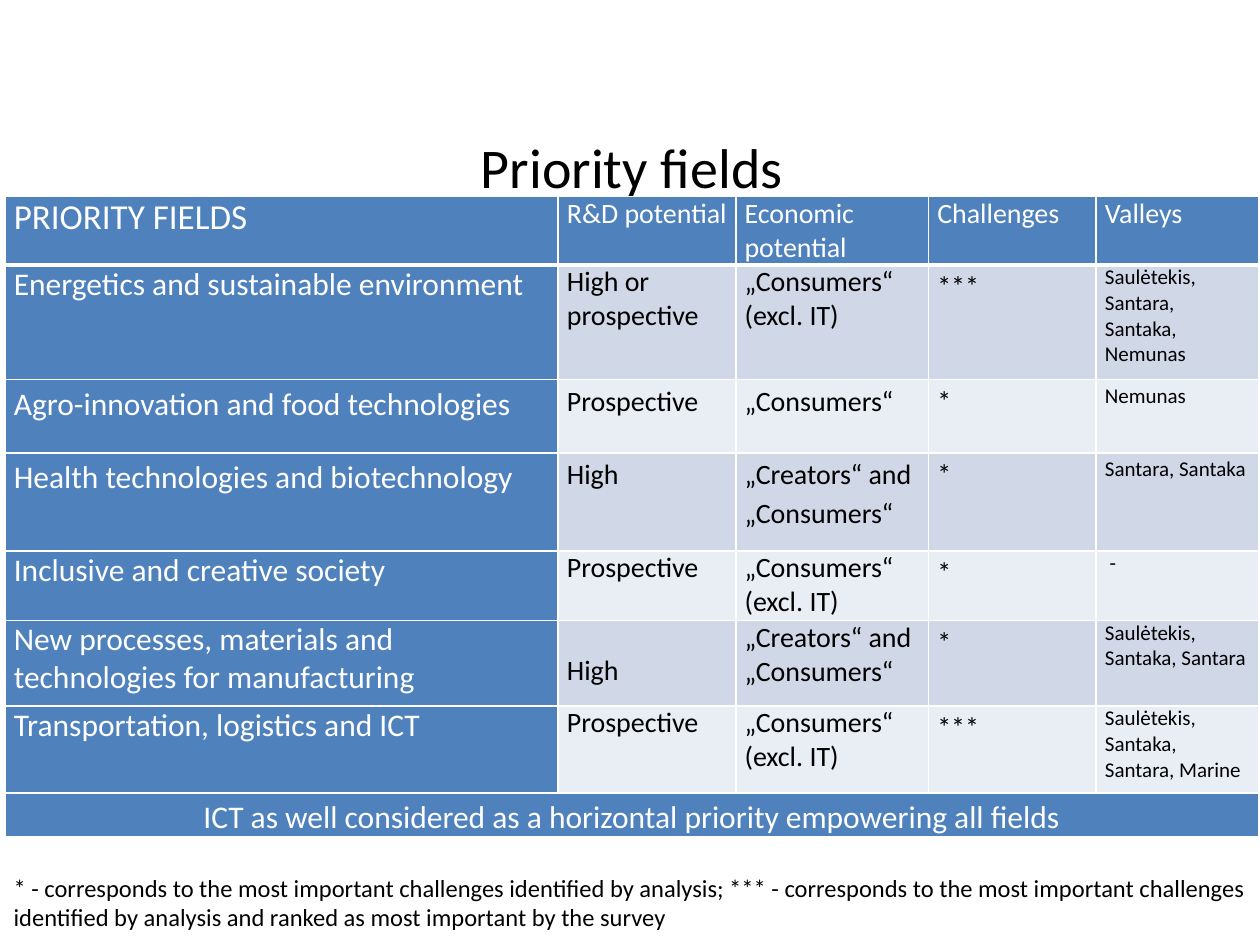
from lxml import etree
from pptx import Presentation
from pptx.dml.color import RGBColor
from pptx.enum.text import MSO_ANCHOR, PP_ALIGN
from pptx.oxml.ns import qn
from pptx.util import Inches, Pt

CENTER = PP_ALIGN.CENTER
MIDDLE = MSO_ANCHOR.MIDDLE
FONT = "Calibri"
WHITE, BLACK, BLUE = "FFFFFF", "000000", "4F81BD"
BANDS = ("D0D8E8", "E9EDF4")
LOOSE = 1.15

WIDTHS = (4.39, 1.41, 1.53, 1.33, 1.29)
HEIGHTS = (0.54, 0.91, 0.58, 0.78, 0.55, 0.68, 0.69, 0.35)
SIZES = (18, 16, 16, 16, 12)
STARS = 3  # column of challenge marks, always loosely spaced

HEAD = ("PRIORITY FIELDS", "R&D potential", "Economic potential",
        "Challenges", "Valleys")
USERS = "„Consumers“"
NO_IT = "„Consumers“\n(excl. IT)"
MIXED = "„Creators“ and „Consumers“"
# Line spacing of the row, then its cells
FIELDS = (
    (None, "Energetics and sustainable environment", "High or prospective",
     NO_IT, "***", "Saulėtekis, Santara, Santaka, Nemunas"),
    (LOOSE, "Agro-innovation and food technologies", "Prospective",
     USERS, "*", "Nemunas"),
    (LOOSE, "Health technologies and biotechnology", "High",
     MIXED, "*", "Santara, Santaka"),
    (None, "Inclusive and creative society", "Prospective",
     NO_IT, "*", "\u00a0-"),
    (None, "New processes, materials and technologies for manufacturing",
     "High", MIXED, "*", "Saulėtekis, Santaka, Santara"),
    (None, "Transportation, logistics and ICT", "Prospective",
     NO_IT, "***", "Saulėtekis, Santaka, Santara, Marine"),
)
LAST = "ICT as well considered as a horizontal priority empowering all fields"
NOTE = ("* - corresponds to the most important challenges identified by "
        "analysis; *** - corresponds to the most important challenges "
        "identified by analysis and ranked as most important by the survey")


def paint(color):
    return RGBColor.from_string(color)


def write(frame, text, size, color=BLACK, align=None, gap=None):
    frame.text = text
    for para in frame.paragraphs:
        para.alignment = align
        para.line_spacing = gap
        font = para.font
        font.name, font.size = FONT, Pt(size)
        font.color.rgb = paint(color)


def edge(cell, base=1):
    """Draw white cell borders, the lower one base points wide."""
    props = cell._tc.get_or_add_tcPr()
    sides = (("a:lnL", 1), ("a:lnR", 1), ("a:lnT", 1), ("a:lnB", base))
    for place, (tag, width) in enumerate(sides):
        line = etree.Element(qn(tag), w=str(Pt(width)))
        fill = etree.SubElement(line, qn("a:solidFill"))
        etree.SubElement(fill, qn("a:srgbClr"), val=WHITE)
        props.insert(place, line)


def fill_cell(cell, text, size, color, back, gap=None, align=None, base=1):
    cell.margin_left = cell.margin_right = Inches(0.07)
    cell.margin_top = cell.margin_bottom = 0
    cell.fill.solid()
    cell.fill.fore_color.rgb = paint(back)
    edge(cell, base)
    write(cell.text_frame, text, size, color, align, gap)


def add_title(slide, text):
    title = slide.shapes.title
    title.left, title.top = Inches(0.13), Inches(0.92)
    title.width, title.height = Inches(9.77), Inches(0.79)
    title.text_frame.vertical_anchor = MIDDLE
    write(title.text_frame, text, 32, align=CENTER)


def add_grid(slide):
    table = slide.shapes.add_table(
        len(HEIGHTS), len(WIDTHS), Inches(0.04), Inches(1.56),
        Inches(sum(WIDTHS)), Inches(sum(HEIGHTS))).table
    for col, width in zip(table.columns, WIDTHS):
        col.width = Inches(width)
    for row, height in zip(table.rows, HEIGHTS):
        row.height = Inches(height)

    for c, text in enumerate(HEAD):
        size = 16 if c else 20
        fill_cell(table.cell(0, c), text, size, WHITE, BLUE, base=3)
    for r, (gap, *texts) in enumerate(FIELDS, 1):
        for c, text in enumerate(texts):
            color, back = (BLACK, BANDS[(r - 1) % 2]) if c else (WHITE, BLUE)
            fill_cell(table.cell(r, c), text, SIZES[c], color, back,
                      LOOSE if c == STARS else gap)
    # "High" sits level with the second line of its neighbours
    table.cell(5, 1).margin_top = Inches(0.27)

    end = len(HEIGHTS) - 1
    wide = table.cell(end, 0)
    wide.merge(table.cell(end, len(WIDTHS) - 1))
    fill_cell(wide, LAST, 18, WHITE, BLUE, LOOSE, CENTER)


def add_note(slide, text):
    box = slide.shapes.add_textbox(
        Inches(0.01), Inches(6.88), Inches(10), Inches(0.57))
    box.text_frame.word_wrap = True
    write(box.text_frame, text, 14)


def main():
    deck = Presentation()
    deck.slide_width, deck.slide_height = Inches(10), Inches(7.5)
    slide = deck.slides.add_slide(deck.slide_layouts[5])
    add_title(slide, "Priority fields")
    add_grid(slide)
    add_note(slide, NOTE)
    deck.save("out.pptx")


if __name__ == "__main__":
    main()
